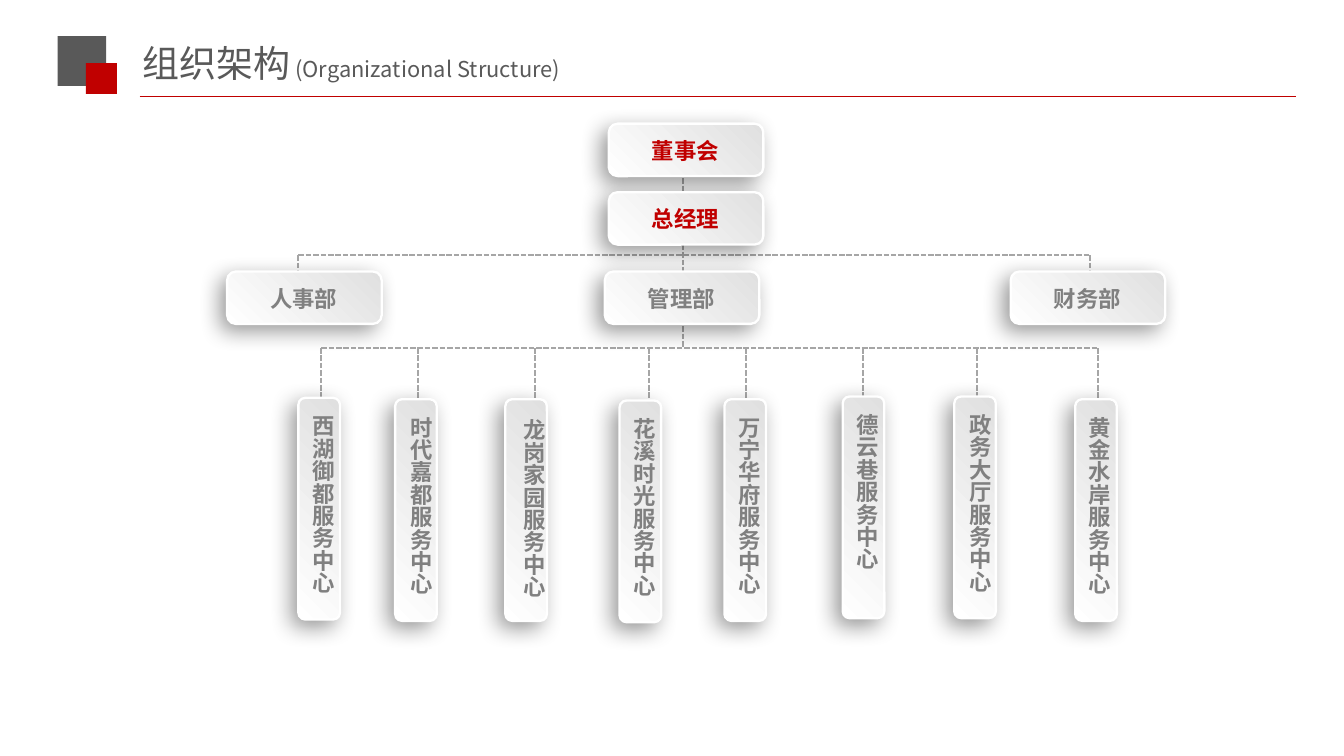
"""Build the organizational structure slide."""
import dataclasses
import lxml.etree
import pptx
import pptx.dml.color
import pptx.enum.dml
import pptx.enum.shapes
import pptx.enum.text
import pptx.oxml.ns
import pptx.util

Inches = pptx.util.Inches
qn = pptx.oxml.ns.qn
SHAPE = pptx.enum.shapes.MSO_SHAPE
ALIGN = pptx.enum.text.PP_ALIGN
ANCHOR = pptx.enum.text.MSO_ANCHOR
COLORS = {"red": "C00000", "dark": "595959", "text": "808080", "line": "A6A6A6",
          "pale": "E0E0E0", "white": "FFFFFF", "shade": "000000"}


@dataclasses.dataclass
class Box:
    """A card of the chart, with the place of its label inside it."""
    name: str
    left: float
    top: float
    color: str = "text"
    tall: bool = False
    dx: float = -0.02
    dy: float = 0.03


@dataclasses.dataclass
class Line:
    """A straight line between two points."""
    x1: float
    y1: float
    x2: float
    y2: float


UNITS = [
    Box("董事会", 4.53, 0.92, "red"),
    Box("总经理", 4.53, 1.43, "red"),
    Box("人事部", 1.69, 2.02),
    Box("管理部", 4.5, 2.02),
    Box("财务部", 7.52, 2.02),
]
CENTERS = [
    Box("西湖御都服务中心", 2.22, 2.96, tall=True),
    Box("时代嘉都服务中心", 2.94, 2.97, tall=True, dx=-0.01),
    Box("龙岗家园服务中心", 3.76, 2.97, tall=True, dx=0.01, dy=0.05),
    Box("花溪时光服务中心", 4.61, 2.98, tall=True),
    Box("万宁华府服务中心", 5.39, 2.97, tall=True),
    Box("德云巷服务中心", 6.27, 2.95, tall=True),
    Box("政务大厅服务中心", 7.1, 2.95, tall=True, dx=-0.01),
    Box("黄金水岸服务中心", 8, 2.97, tall=True),
]
DROPS = [2.39, 3.11, 3.98, 4.83, 5.55, 6.42, 7.27, 8.17]
LINES = [
    Line(2.22, 1.9, 8.11, 1.9),
    Line(2.22, 1.9, 2.22, 2.42),
    Line(8.11, 1.9, 8.11, 2.41),
    Line(5.08, 1.16, 5.08, 2.58),
    Line(DROPS[0], 2.59, DROPS[-1], 2.59),
    *(Line(x, 2.59, x, 3.84) for x in DROPS),
]


def shade(name: str) -> pptx.dml.color.RGBColor:
    """Look up a colour."""
    return pptx.dml.color.RGBColor.from_string(COLORS[name])


def set_font(para, face: str, color: str) -> None:
    """Set the typeface and colour of a paragraph."""
    para.font.name = face
    para.font.color.rgb = shade(color)
    props = para._p.pPr.find(qn("a:defRPr"))
    lxml.etree.SubElement(props, qn("a:ea"), typeface="Noto Sans CJK SC")


def draw_line(slide, line: Line, color: str, width: float, dashed: bool) -> None:
    """Draw a connector without a shadow."""
    link = slide.shapes.add_connector(
        pptx.enum.shapes.MSO_CONNECTOR.STRAIGHT,
        Inches(line.x1), Inches(line.y1), Inches(line.x2), Inches(line.y2))
    link.line.color.rgb = shade(color)
    link.line.width = pptx.util.Pt(width)
    if dashed:
        link.line.dash_style = pptx.enum.dml.MSO_LINE.SQUARE_DOT
        link.line._ln.find(qn("a:prstDash")).set("val", "sysDash")
    lxml.etree.SubElement(link._element.spPr, qn("a:effectLst"))


def draw_mark(slide, left: float, top: float, wide: float, high: float, color: str) -> None:
    """Draw a plain block beside the title."""
    mark = slide.shapes.add_shape(SHAPE.RECTANGLE, Inches(left), Inches(top),
                                  Inches(wide), Inches(high))
    mark.fill.solid()
    mark.fill.fore_color.rgb = shade(color)
    mark.line.fill.background()
    mark.shadow.inherit = False


def draw_card(slide, box: Box) -> None:
    """Draw a rounded card with a gradient and a soft shadow."""
    wide, high = (0.31, 1.65) if box.tall else (1.15, 0.39)
    card = slide.shapes.add_shape(SHAPE.ROUNDED_RECTANGLE, Inches(box.left),
                                  Inches(box.top), Inches(wide), Inches(high))
    card.fill.gradient()
    card.fill.gradient_angle = 225
    for stop, color in zip(card.fill.gradient_stops, ("pale", "white")):
        stop.color.rgb = shade(color)
    card.line.color.rgb = shade("white")
    card.line.width = pptx.util.Pt(1.25)
    card.shadow.inherit = False
    glow = lxml.etree.SubElement(
        card._element.spPr.find(qn("a:effectLst")), qn("a:outerShdw"),
        blurRad=str(pptx.util.Pt(12)), dist=str(pptx.util.Pt(5)),
        dir="8100000", algn="tr", rotWithShape="0")
    tint = lxml.etree.SubElement(glow, qn("a:srgbClr"), val=COLORS["shade"])
    lxml.etree.SubElement(tint, qn("a:alpha"), val="40000")


def draw_label(slide, box: Box) -> None:
    """Write the name of a card, downwards if the card is tall."""
    dx, dy, wide, high = (box.dx, box.dy, 0.4, 1.59) if box.tall else (0.1, 0.05, 0.94, 0.3)
    label = slide.shapes.add_textbox(Inches(box.left + dx), Inches(box.top + dy),
                                     Inches(wide), Inches(high))
    frame = label.text_frame
    frame.word_wrap = True
    frame.auto_size = pptx.enum.text.MSO_AUTO_SIZE.SHAPE_TO_FIT_TEXT
    if box.tall:
        frame.vertical_anchor = ANCHOR.MIDDLE
        frame._txBody.bodyPr.set("vert", "eaVert")
    para = frame.paragraphs[0]
    para.text = box.name
    para.alignment = ALIGN.CENTER
    para.font.size = pptx.util.Pt(12)
    para.font.bold = True
    set_font(para, "Arial", box.color)


def draw_title(slide) -> None:
    """Place and format the title."""
    title = slide.shapes.title
    title.left, title.top = Inches(0.99), Inches(0.29)
    title.width, title.height = Inches(6.45), Inches(0.36)
    frame = title.text_frame
    frame.word_wrap = True
    frame.vertical_anchor = ANCHOR.MIDDLE
    frame.margin_left = frame.margin_right = Inches(0.07)
    frame.margin_top = frame.margin_bottom = Inches(0.04)
    para = frame.paragraphs[0]
    para.alignment = ALIGN.LEFT
    for words, size in (("组织架构", 19.8), (" (Organizational Structure)", 11.7)):
        run = para.add_run()
        run.text = words
        run.font.size = pptx.util.Pt(size)
    set_font(para, "Noto Sans CJK SC", "dark")


def main() -> None:
    """Build and save the slide."""
    deck = pptx.Presentation()
    deck.slide_width = Inches(10)
    deck.slide_height = deck.slide_width * 9 // 16
    slide = deck.slides.add_slide(deck.slide_layouts[5])
    draw_title(slide)
    draw_line(slide, Line(1.04, 0.72, 9.64, 0.72), "red", 0.5, False)
    draw_mark(slide, 0.43, 0.27, 0.36, 0.37, "dark")
    draw_mark(slide, 0.64, 0.47, 0.23, 0.23, "red")
    for line in LINES:
        draw_line(slide, line, "line", 1, True)
    for box in UNITS + CENTERS:
        draw_card(slide, box)
        draw_label(slide, box)
    deck.save("out.pptx")


if __name__ == "__main__":
    main()
